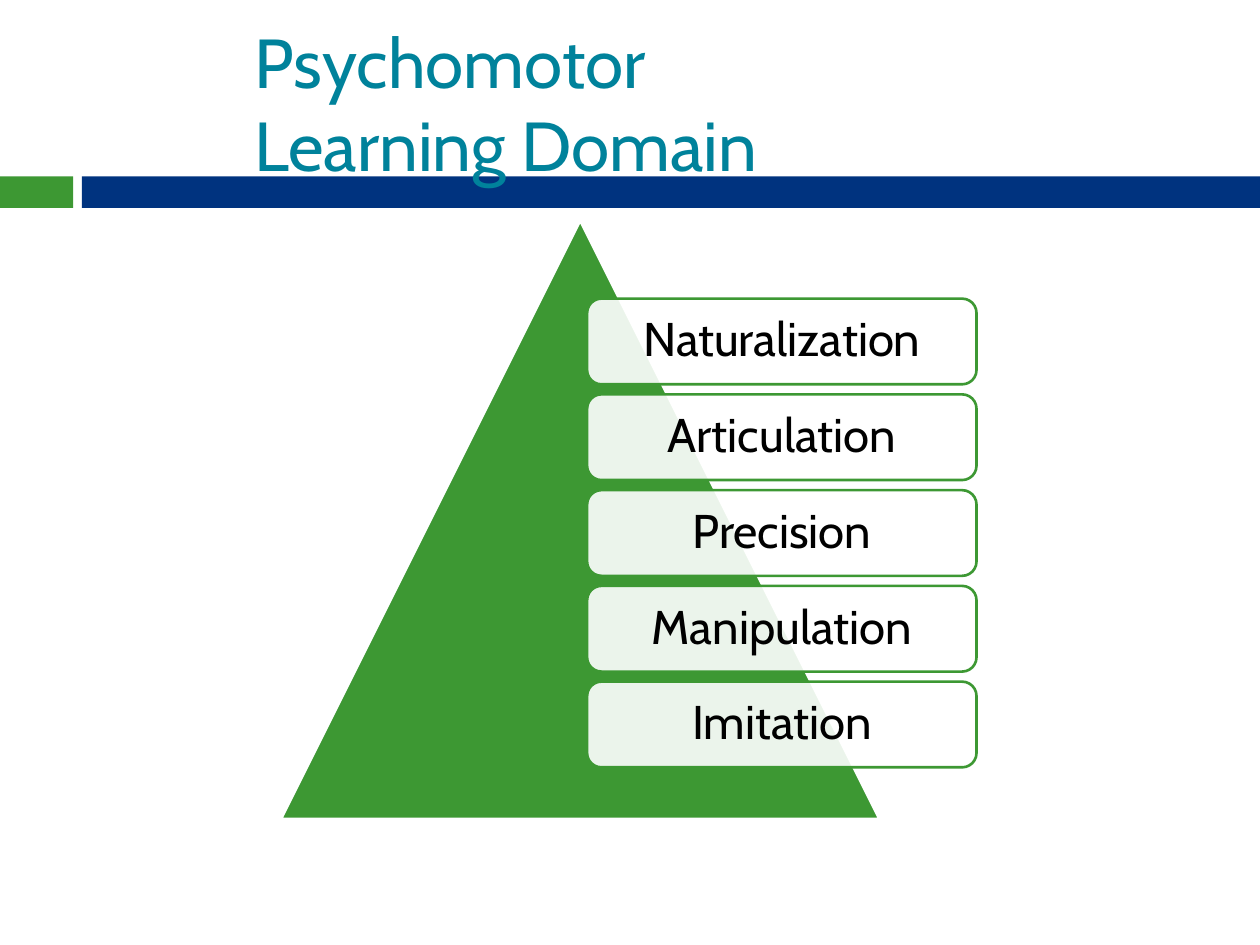
from dataclasses import dataclass

from lxml import etree
from pptx import Presentation
from pptx.dml.color import RGBColor
from pptx.enum.shapes import MSO_SHAPE
from pptx.enum.text import MSO_ANCHOR, PP_ALIGN
from pptx.oxml.ns import qn
from pptx.util import Inches, Pt

RECTANGLE = MSO_SHAPE.RECTANGLE
TRIANGLE = MSO_SHAPE.ISOSCELES_TRIANGLE
ROUNDED = MSO_SHAPE.ROUNDED_RECTANGLE
MIDDLE = MSO_ANCHOR.MIDDLE
LEFT, CENTER = PP_ALIGN.LEFT, PP_ALIGN.CENTER
TITLE_ONLY = 5

# Content
TITLE_LINES = ["Psychomotor", "Learning Domain"]
LEVELS = ["Naturalization", "Articulation", "Precision", "Manipulation", "Imitation"]


@dataclass(frozen=True)
class Theme:
    font: str = "Cabin"
    green: str = "3D9833"
    navy: str = "00337F"
    teal: str = "00829B"
    white: str = "FFFFFF"
    black: str = "000000"
    title_size: float = 39.6
    level_size: float = 27
    line_width: float = 1.5
    box_opacity: int = 90


THEME = Theme()

# Layout in inches
WIDTH, HEIGHT = 10, 7.5
BAND_TOP, BAND_HEIGHT = 1.4, 0.25
BAND_SPLIT, BAND_GAP = 0.58, 0.07
TITLE_AREA = (1.92, 0.38, 6.17, 0.87)
PYRAMID_LEFT, PYRAMID_TOP, PYRAMID_SIDE = 2.23, 1.75, 4.75
LEVEL_LEFT, LEVEL_TOP, LEVEL_WIDTH, LEVEL_HEIGHT = 4.66, 2.37, 3.09, 0.68
LEVEL_PITCH = 0.76
LEVEL_INSET = 0.11


def add_filled(page, kind, area, fill, line=None):
    shape = page.shapes.add_shape(kind, *map(Inches, area))
    shape.shadow.inherit = False
    shape.fill.solid()
    shape.fill.fore_color.rgb = RGBColor.from_string(fill)
    if line:
        shape.line.color.rgb = RGBColor.from_string(line)
        shape.line.width = Pt(THEME.line_width)
    else:
        shape.line.fill.background()
    return shape


def set_opacity(shape, percent):
    color = shape.fill._xPr.find(qn("a:solidFill"))[0]
    etree.SubElement(color, qn("a:alpha"), val=str(percent * 1000))


def add_span(para, text, size, color):
    span = para.add_run()
    span.text = text
    span.font.name = THEME.font
    span.font.size = Pt(size)
    span.font.color.rgb = RGBColor.from_string(color)


def add_title(page):
    title = page.shapes.title
    title.left, title.top, title.width, title.height = map(Inches, TITLE_AREA)
    frame = title.text_frame
    frame.word_wrap = True
    frame.vertical_anchor = MIDDLE
    para = frame.paragraphs[0]
    para.alignment = LEFT
    for index, text in enumerate(TITLE_LINES):
        if index:
            para.add_line_break()
        add_span(para, text, THEME.title_size, THEME.teal)


def add_level(page, row, text):
    area = (LEVEL_LEFT, LEVEL_TOP + row * LEVEL_PITCH, LEVEL_WIDTH, LEVEL_HEIGHT)
    box = add_filled(page, ROUNDED, area, THEME.white, THEME.green)
    set_opacity(box, THEME.box_opacity)
    frame = box.text_frame
    frame.word_wrap = True
    frame.vertical_anchor = MIDDLE
    frame.margin_left = frame.margin_right = Inches(LEVEL_INSET)
    frame.margin_top = frame.margin_bottom = Inches(LEVEL_INSET)
    para = frame.paragraphs[0]
    para.alignment = CENTER
    para.line_spacing = 0.9
    add_span(para, text, THEME.level_size, THEME.black)


def main():
    deck = Presentation()
    deck.slide_width, deck.slide_height = Inches(WIDTH), Inches(HEIGHT)
    page = deck.slides.add_slide(deck.slide_layouts[TITLE_ONLY])

    # Two-colour band, behind the title
    navy_left = BAND_SPLIT + BAND_GAP
    bands = [(0, BAND_SPLIT, THEME.green), (navy_left, WIDTH - navy_left, THEME.navy)]
    for left, width, color in bands:
        add_filled(page, RECTANGLE, (left, BAND_TOP, width, BAND_HEIGHT), color)
    add_title(page)
    page.shapes._spTree.append(page.shapes.title._element)

    # Pyramid with one box per level
    pyramid = (PYRAMID_LEFT, PYRAMID_TOP, PYRAMID_SIDE, PYRAMID_SIDE)
    add_filled(page, TRIANGLE, pyramid, THEME.green, THEME.white)
    for row, text in enumerate(LEVELS):
        add_level(page, row, text)

    deck.save("out.pptx")


if __name__ == "__main__":
    main()
